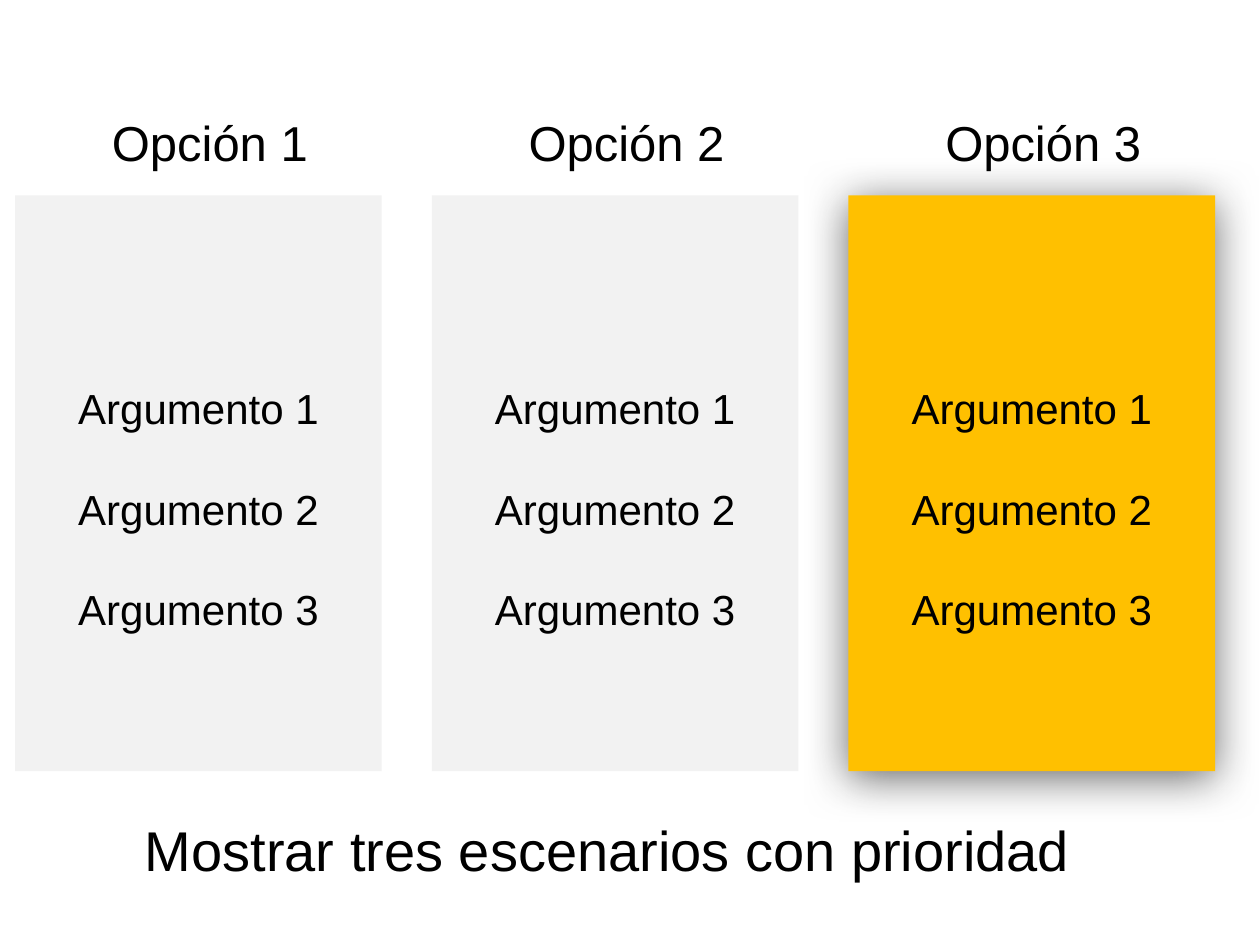
from lxml import etree
from pptx import Presentation
from pptx.dml.color import RGBColor
from pptx.enum.shapes import MSO_SHAPE as Shape
from pptx.enum.text import MSO_ANCHOR as Anchor, MSO_AUTO_SIZE as AutoSize, PP_ALIGN as Align
from pptx.oxml.ns import qn
from pptx.util import Inches, Pt

FONT = "Arial"
BLACK, GREY, AMBER, SHADOW = "000000", "F2F2F2", "FFC000", "595959"
CARD_LEFT, CARD_TOP, CARD_WIDTH, CARD_HEIGHT = 0.12, 1.55, 2.91, 4.57
CARD_STEP = 3.307
HEADING_OFFSET = 0.67
ARGUMENTS = ["Argumento 1", "Argumento 2", "Argumento 3"]
OPTIONS = [("Opción 1", GREY), ("Opción 2", GREY), ("Opción 3", AMBER)]


def color(value):
    return RGBColor.from_string(value)


def format_paragraph(paragraph, size, alignment=Align.LEFT):
    paragraph.alignment = alignment
    paragraph.font.name = FONT
    paragraph.font.size = Pt(size)
    paragraph.font.color.rgb = color(BLACK)


def write_line(shape, text, size):
    """Put one unwrapped line of text in a text box or placeholder."""
    frame = shape.text_frame
    frame.text = text
    frame.word_wrap = False
    frame.auto_size = AutoSize.SHAPE_TO_FIT_TEXT
    frame.vertical_anchor = Anchor.TOP
    format_paragraph(frame.paragraphs[0], size)


def add_heading(slide, left, text):
    box = slide.shapes.add_textbox(Inches(left), Inches(0.84), Inches(1.78), Inches(0.57))
    write_line(box, text, 28)


def add_glow_shadow(shape):
    """Give the highlighted card a soft shadow that falls downwards."""
    effects = shape._element.spPr.find(qn("a:effectLst"))
    shadow = etree.SubElement(effects, qn("a:outerShdw"), blurRad=str(Pt(25)),
                              dist=str(Pt(4)), dir="5400000", algn="ctr", rotWithShape="0")
    shade = etree.SubElement(shadow, qn("a:srgbClr"), val=SHADOW)
    etree.SubElement(shade, qn("a:alpha"), val="89000")


def add_card(slide, left, fill):
    card = slide.shapes.add_shape(Shape.RECTANGLE, Inches(left), Inches(CARD_TOP),
                                  Inches(CARD_WIDTH), Inches(CARD_HEIGHT))
    card.shadow.inherit = False
    card.fill.solid()
    card.fill.fore_color.rgb = color(fill)
    card.line.fill.background()
    frame = card.text_frame
    frame.text = "\n".join(ARGUMENTS)
    frame.vertical_anchor = Anchor.MIDDLE
    for paragraph in frame.paragraphs:
        format_paragraph(paragraph, 24, Align.CENTER)
        paragraph.line_spacing = 2.0
    return card


def main():
    presentation = Presentation()
    presentation.slide_width, presentation.slide_height = Inches(10), Inches(7.5)
    slide = presentation.slides.add_slide(presentation.slide_layouts[5])

    # Three options, the preferred one highlighted
    for index, (name, fill) in enumerate(OPTIONS):
        left = CARD_LEFT + index * CARD_STEP
        card = add_card(slide, left, fill)
        if fill == AMBER:
            add_glow_shadow(card)
        add_heading(slide, left + HEADING_OFFSET, name)

    # Title below the cards
    title = slide.shapes.title
    title.left, title.top = Inches(1.05), Inches(6.42)
    title.width, title.height = Inches(7.9), Inches(0.64)
    write_line(title, "Mostrar tres escenarios con prioridad", 32)

    presentation.save("out.pptx")


if __name__ == "__main__":
    main()
